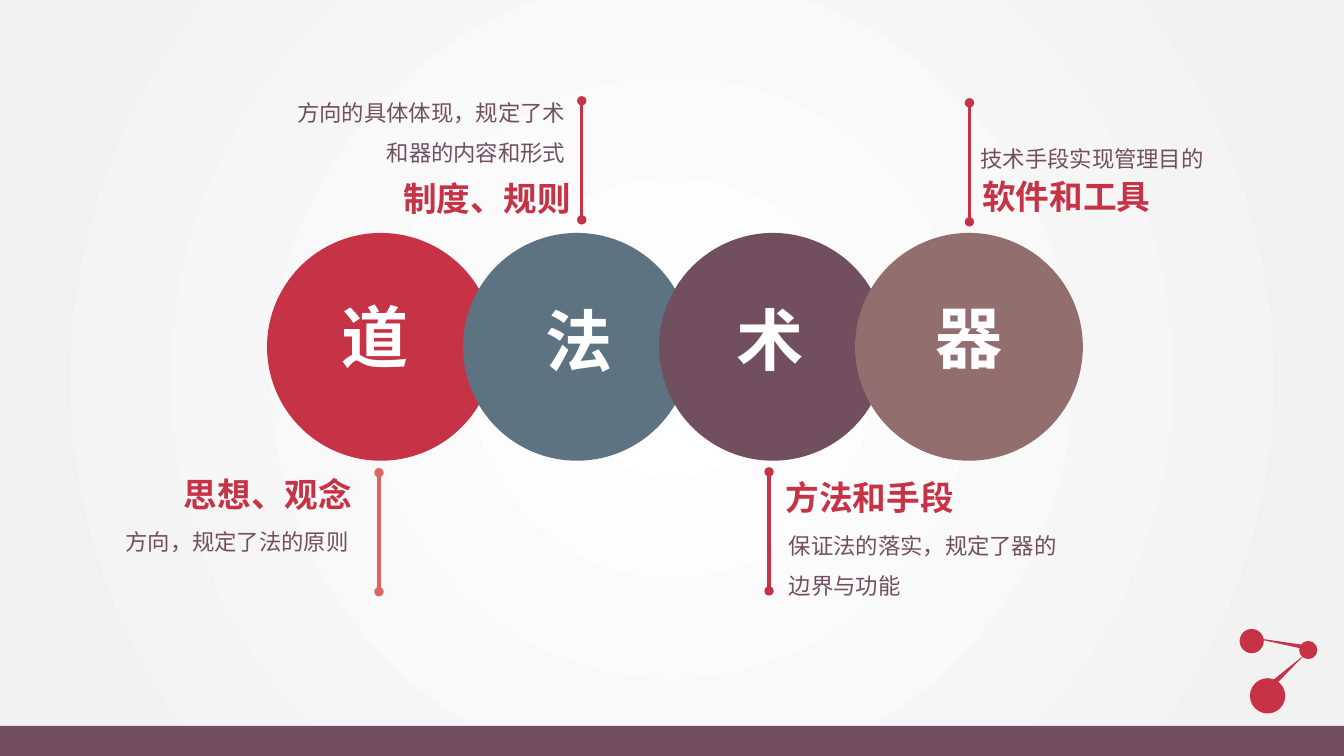
from lxml import etree
from pptx import Presentation
from pptx import util as u
from pptx.dml.color import RGBColor
from pptx.enum import shapes, text
from pptx.oxml import ns

FONT = "Noto Sans CJK SC"
COLORS = {
    "white": "FFFFFF", "mist": "F2F2F2", "red": "C73346", "coral": "DE6564",
    "slate": "5D7381", "plum": "724F5F", "taupe": "926E6E",
}
LEFT, RIGHT, CENTER = text.PP_ALIGN.LEFT, text.PP_ALIGN.RIGHT, text.PP_ALIGN.CENTER
OVAL, TRIANGLE = shapes.MSO_SHAPE.OVAL, shapes.MSO_SHAPE.ISOSCELES_TRIANGLE

CIRCLE_LEFT, CIRCLE_TOP, CIRCLE_SIZE, CIRCLE_STEP = 6.73, 5.87, 5.74, 4.94
STEM_LENGTH = 3

# Positions are in centimetres: (left, top) or (left, top, width, height).
STAGES = [
    dict(glyph="道", glyph_at=(8.36, 7.32), color="red",
         heading="思想、观念", heading_at=(4.34, 11.81), heading_align=RIGHT,
         caption="方向，规定了法的原则", caption_at=(0.89, 13.06, 8.15, 1.07),
         caption_align=RIGHT, spacing=u.Pt(23),
         stem_at=(9.55, 11.91), stem_color="coral"),
    dict(glyph="法", glyph_at=(13.49, 7.42), color="slate",
         heading="制度、规则", heading_at=(9.86, 4.37), heading_align=RIGHT,
         caption="方向的具体体现，规定了术和器的内容和形式",
         caption_at=(6.73, 2.03, 7.77, 2.31), caption_align=RIGHT, spacing=1.5,
         stem_at=(14.66, 2.54), stem_color="red"),
    dict(glyph="术", glyph_at=(18.31, 7.39), color="plum",
         heading="方法和手段", heading_at=(19.53, 11.89), heading_align=CENTER,
         caption="保证法的落实，规定了器的边界与功能",
         caption_at=(19.63, 12.95, 7.67, 2.31), caption_align=LEFT, spacing=1.5,
         stem_at=(19.38, 11.89), stem_color="red"),
    dict(glyph="器", glyph_at=(23.32, 7.34), color="taupe",
         heading="软件和工具", heading_at=(24.46, 4.32), heading_align=RIGHT,
         caption="技术手段实现管理目的", caption_at=(24.46, 3.2, 6.45, 1.27),
         caption_align=LEFT, spacing=1.5,
         stem_at=(24.43, 2.59), stem_color="red"),
]

# Corner ornament: kind, left, top, width, height, rotation.
MOLECULE = [
    (OVAL, 31.5, 17.09, 0.89, 0.89, 0),
    (OVAL, 32.74, 16.15, 0.46, 0.46, 0),
    (TRIANGLE, 32.26, 16.23, 0.18, 1.5, 47.7),
    (OVAL, 31.24, 15.85, 0.61, 0.61, 0),
    (TRIANGLE, 32.11, 15.49, 0.1, 1.37, 280.3),
]


def rgb(color):
    return RGBColor.from_string(COLORS[color])


def set_radial_background(slide):
    fill = slide.background.fill
    fill.gradient()
    for stop, color, position in zip(fill.gradient_stops, ("white", "mist"), (0, 0.91)):
        stop.color.rgb = rgb(color)
        stop.position = position
    gradient = slide.element.find(".//" + ns.qn("a:gradFill"))
    gradient.remove(gradient.find(ns.qn("a:lin")))
    center = etree.SubElement(gradient, ns.qn("a:path"), path="circle")
    etree.SubElement(center, ns.qn("a:fillToRect"),
                     l="50000", t="50000", r="50000", b="50000")


def add_solid(parent, kind, left, top, width, height, color, rotation=0):
    """Add a borderless filled shape to a shape collection."""
    solid = parent.add_shape(kind, u.Cm(left), u.Cm(top), u.Cm(width), u.Cm(height))
    solid.shadow.inherit = False
    solid.fill.solid()
    solid.fill.fore_color.rgb = rgb(color)
    solid.line.fill.background()
    solid.rotation = rotation


def add_label(slide, words, at, size, color, align=LEFT, bold=False, wrap=True, spacing=None):
    label = slide.shapes.add_textbox(*map(u.Cm, at))
    frame = label.text_frame
    frame.word_wrap = wrap
    frame.auto_size = text.MSO_AUTO_SIZE.SHAPE_TO_FIT_TEXT
    paragraph = frame.paragraphs[0]
    paragraph.alignment = align
    paragraph.line_spacing = spacing
    run = paragraph.add_run()
    run.text = words
    run.font.size = u.Pt(size)
    run.font.bold = bold
    run.font.color.rgb = rgb(color)
    run.font.name = FONT
    etree.SubElement(run.font._element, ns.qn("a:ea"), typeface=FONT)


def add_stem(slide, left, top, color):
    """Add a vertical line with a dot at each end."""
    stem = slide.shapes.add_connector(
        shapes.MSO_CONNECTOR.STRAIGHT,
        u.Cm(left), u.Cm(top), u.Cm(left), u.Cm(top + STEM_LENGTH))
    stem.line.width = u.Pt(2.25)
    stem.line.color.rgb = rgb(color)
    outline = stem.line._get_or_add_ln()
    for end in ("a:headEnd", "a:tailEnd"):
        etree.SubElement(outline, ns.qn(end), type="oval")
    etree.SubElement(stem.element.spPr, ns.qn("a:effectLst"))


def add_molecule(slide):
    group = slide.shapes.add_group_shape()
    for kind, left, top, width, height, rotation in MOLECULE:
        add_solid(group.shapes, kind, left, top, width, height, "red", rotation)


def main():
    prs = Presentation()
    prs.slide_width, prs.slide_height = u.Cm(33.87), u.Cm(19.05)
    slide = prs.slides.add_slide(prs.slide_layouts[6])
    set_radial_background(slide)
    add_solid(slide.shapes, shapes.MSO_SHAPE.RECTANGLE, 0, 18.29, 33.87, 0.76, "plum")

    for i, stage in enumerate(STAGES):
        add_solid(slide.shapes, OVAL, CIRCLE_LEFT + i * CIRCLE_STEP, CIRCLE_TOP,
                  CIRCLE_SIZE, CIRCLE_SIZE, stage["color"])
    for stage in STAGES:
        add_label(slide, stage["glyph"], (*stage["glyph_at"], 2.18, 2.31),
                  48, "white", bold=True)
        add_label(slide, stage["caption"], stage["caption_at"], 16, "plum",
                  stage["caption_align"], spacing=stage["spacing"])
        add_label(slide, stage["heading"], (*stage["heading_at"], 4.78, 1.27),
                  24, "red", stage["heading_align"], bold=True, wrap=False)
        add_stem(slide, *stage["stem_at"], stage["stem_color"])

    add_molecule(slide)
    prs.save("out.pptx")


if __name__ == "__main__":
    main()
